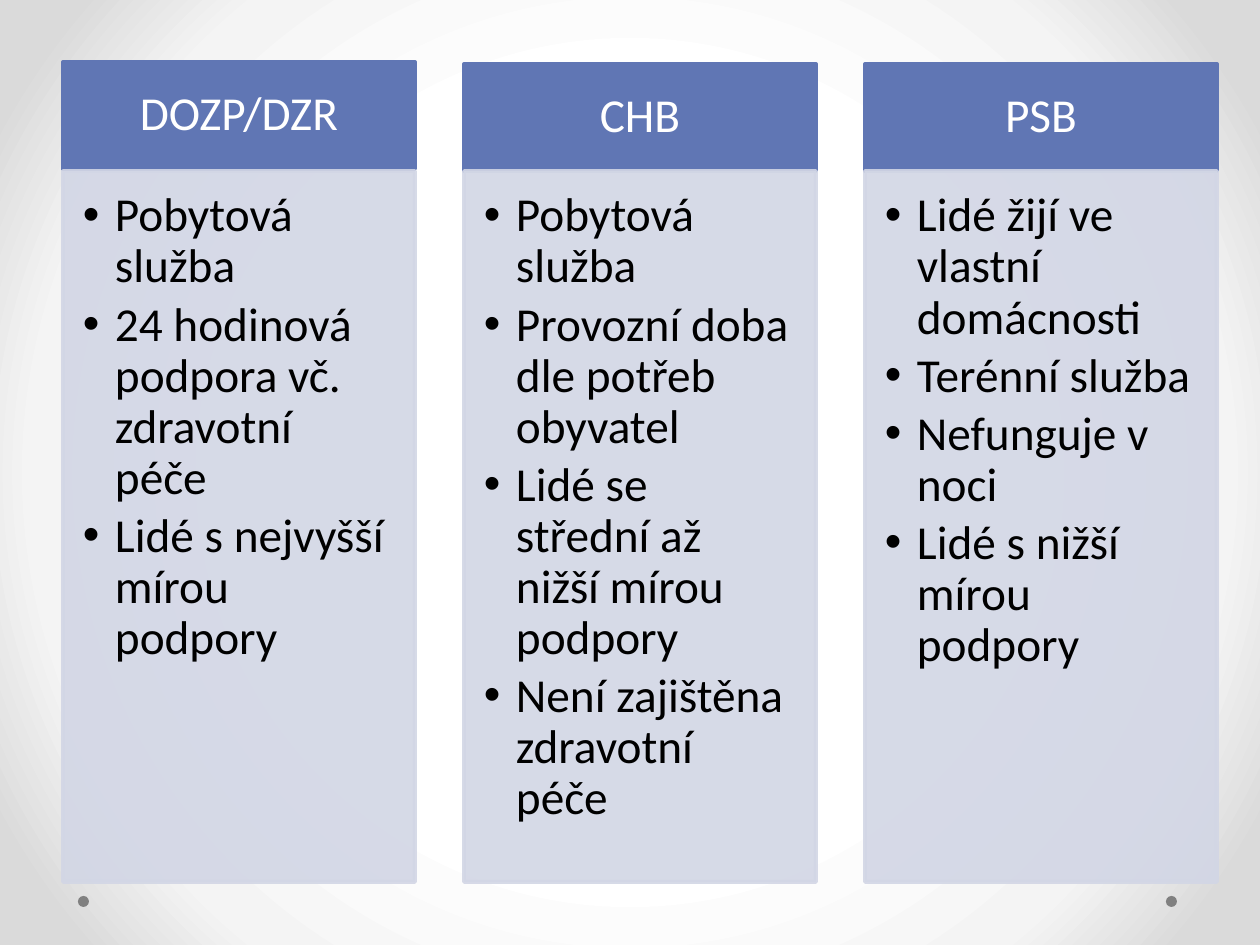
from lxml import etree
from pptx import Presentation
from pptx.dml.color import RGBColor
from pptx.enum.shapes import MSO_SHAPE
from pptx.enum.text import MSO_ANCHOR, PP_ALIGN
from pptx.oxml import parse_xml
from pptx.oxml.ns import qn
from pptx.util import Pt

RECT, OVAL = MSO_SHAPE.RECTANGLE, MSO_SHAPE.OVAL
TOP, MIDDLE = MSO_ANCHOR.TOP, MSO_ANCHOR.MIDDLE
LEFT, CENTER = PP_ALIGN.LEFT, PP_ALIGN.CENTER

BLUE = RGBColor(0x60, 0x76, 0xB4)
PALE = RGBColor(0xD2, 0xD6, 0xE5)
GRAY = RGBColor(0x80, 0x80, 0x80)
WHITE = RGBColor(0xFF, 0xFF, 0xFF)
BLACK = RGBColor(0, 0, 0)

PX = 914400 / 126
CARD_LEFT, CARD_STEP, CARD_W = 63, 401, 352
HEAD_H, BODY_TOP, BODY_H = 107, 171, 711
INDENT = 32

CARDS = [
    ("DOZP/DZR", 62, ["Pobytová služba",
                      "24 hodinová podpora vč. zdravotní péče",
                      "Lidé s nejvyšší mírou podpory"]),
    ("CHB", 64, ["Pobytová služba",
                 "Provozní doba dle potřeb obyvatel",
                 "Lidé se střední až nižší mírou podpory",
                 "Není zajištěna zdravotní péče"]),
    ("PSB", 64, ["Lidé žijí ve vlastní domácnosti",
                 "Terénní služba",
                 "Nefunguje v noci",
                 "Lidé s nižší mírou podpory"]),
]
HEAD_FORMAT = dict(vertical_anchor=MIDDLE, margin_left=26, margin_top=15,
                   margin_right=26, margin_bottom=15)
BODY_FORMAT = dict(vertical_anchor=TOP, margin_left=20, margin_top=20,
                   margin_right=26, margin_bottom=30)


def px(n):
    return round(n * PX)


def add_box(s, kind, box, color, lines=(), text_color=WHITE, align=CENTER, fmt=None):
    """Add a filled shape, with one paragraph for each of the lines."""
    sp = s.shapes.add_shape(kind, *map(px, box))
    sp.shadow.inherit = False
    sp.fill.solid()
    sp.fill.fore_color.rgb = color
    sp.line.color.rgb = color
    sp.line.width = Pt(2.25)
    tf = sp.text_frame
    tf.word_wrap = True
    for name, value in (fmt or {}).items():
        setattr(tf, name, px(value) if name.startswith("margin") else value)
    for i, text in enumerate(lines):
        p = tf.paragraphs[0] if i == 0 else tf.add_paragraph()
        p.alignment, p.line_spacing, p.space_after = align, 0.9, Pt(4)
        r = p.add_run()
        r.text = text
        r.font.name, r.font.size = "Calibri", Pt(27)
        r.font.color.rgb = text_color
    return sp


prs = Presentation()
prs.slide_width, prs.slide_height = px(1260), px(945)
s = prs.slides.add_slide(prs.slide_layouts[6])

# Round gradient background, white in the middle
s.background.fill.solid()
solid = s.element.xpath(".//p:bgPr/a:solidFill")[0]
stops = "".join(f'<a:gs pos="{pos}000"><a:srgbClr val="{color}"/></a:gs>'
                for pos, color in [(50, "FFFFFF"), (76, "F4F4F4"), (92, "DADADA")])
solid.getparent().replace(solid, parse_xml(
    '<a:gradFill xmlns:a="http://schemas.openxmlformats.org/drawingml/2006/main" '
    f'rotWithShape="1"><a:gsLst>{stops}</a:gsLst><a:path path="circle">'
    '<a:fillToRect l="50000" t="50000" r="50000" b="50000"/></a:path></a:gradFill>'))

for dot_left in (1166, 78):
    dot = add_box(s, OVAL, (dot_left, 896, 11, 11), GRAY)
    dot.line.fill.background()

for i, (title, head_top, items) in enumerate(CARDS):
    left = CARD_LEFT + i * CARD_STEP
    add_box(s, RECT, (left, head_top, CARD_W, HEAD_H), BLUE, [title], fmt=HEAD_FORMAT)
    body = add_box(s, RECT, (left, BODY_TOP, CARD_W, BODY_H), PALE, items,
                   BLACK, LEFT, BODY_FORMAT)
    for color in body.element.spPr.iter(qn("a:srgbClr")):
        etree.SubElement(color, qn("a:alpha"), val="90000")
    for p in body.text_frame.paragraphs:
        pPr = p._p.get_or_add_pPr()
        pPr.set("marL", str(px(INDENT)))
        pPr.set("indent", str(-px(INDENT)))
        etree.SubElement(pPr, qn("a:buFont"), typeface="Arial")
        etree.SubElement(pPr, qn("a:buChar"), char="•")

prs.save("out.pptx")
